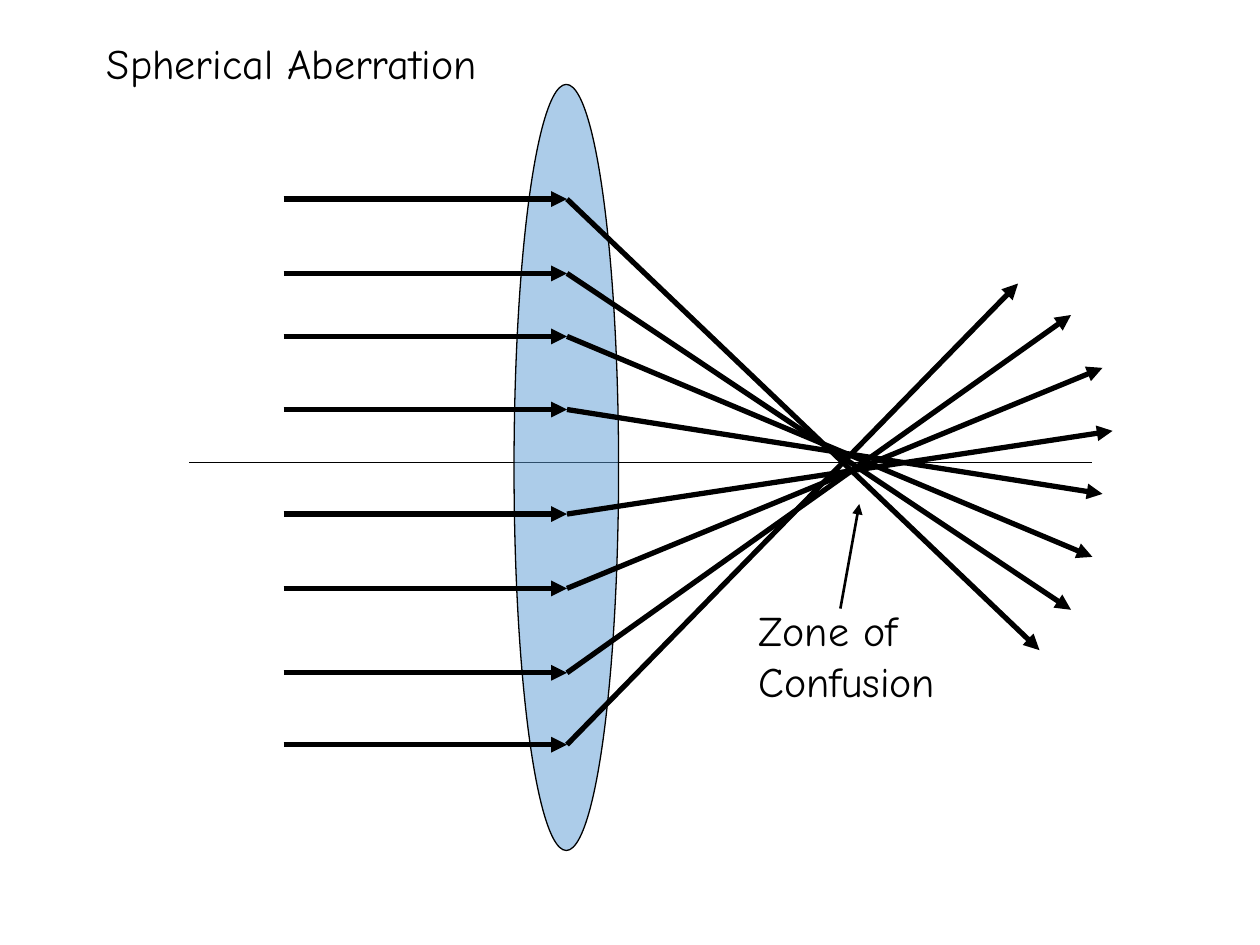
from dataclasses import dataclass
from typing import NamedTuple

from lxml.etree import SubElement
from pptx import Presentation
from pptx.dml.color import RGBColor as RGB
from pptx.enum.shapes import MSO_CONNECTOR as Conn, MSO_SHAPE as Shape
from pptx.enum.text import MSO_AUTO_SIZE as AutoSize
from pptx.oxml.ns import qn
from pptx.util import Inches, Pt


@dataclass(frozen=True)
class Theme:
    ink: RGB = RGB(0, 0, 0)
    lens: RGB = RGB(0x5B, 0x9B, 0xD5)
    lens_alpha: int = 50
    font: str = "Comic Neue"
    text_size: float = 24
    thin: float = 0.75
    pointer: float = 1.5
    ray: float = 3


class Point(NamedTuple):
    x: float
    y: float


class Ray(NamedTuple):
    height: float
    end: Point


THEME = Theme()
SOURCE_X = 2.25
LENS_X = 4.5
RAY_PAIRS = [
    (Ray(3.25, Point(8.75, 3.92)), Ray(4.08, Point(8.83, 3.42))),
    (Ray(2.67, Point(8.67, 4.42)), Ray(4.67, Point(8.75, 2.92))),
    (Ray(2.17, Point(8.5, 4.84)), Ray(5.34, Point(8.5, 2.5))),
    (Ray(1.58, Point(8.25, 5.16)), Ray(5.91, Point(8.08, 2.25))),
]


def add_text(shapes, text: str, left: float, top: float, width: float, height: float, *,
             size: float = THEME.text_size, color: RGB = THEME.ink, font: str = THEME.font):
    box = shapes.add_textbox(Inches(left), Inches(top), Inches(width), Inches(height))
    tf = box.text_frame
    tf.word_wrap = True
    tf.auto_size = AutoSize.SHAPE_TO_FIT_TEXT
    r = tf.paragraphs[0].add_run()
    r.text = text
    r.font.size = Pt(size)
    r.font.name = font
    r.font.color.rgb = color
    return box


def add_line(shapes, start: Point, end: Point, weight: float, arrow: bool = True):
    line = shapes.add_connector(Conn.STRAIGHT, *map(Inches, (*start, *end)))
    line.line.color.rgb = THEME.ink
    line.line.width = Pt(weight)
    sp_pr = line.element.spPr
    if arrow:
        SubElement(sp_pr.find(qn("a:ln")), qn("a:tailEnd"), type="triangle")
    SubElement(sp_pr, qn("a:effectLst"))
    return line


def add_lens(shapes, left: float, top: float, width: float, height: float):
    sp = shapes.add_shape(Shape.OVAL, *map(Inches, (left, top, width, height)))
    sp.shadow.inherit = False
    sp.fill.solid()
    sp.fill.fore_color.rgb = THEME.lens
    color = sp.element.spPr.find(qn("a:solidFill")).find(qn("a:srgbClr"))
    SubElement(color, qn("a:alpha"), val=str(THEME.lens_alpha * 1000))
    sp.line.color.rgb = THEME.ink
    sp.line.width = Pt(THEME.thin)
    return sp


def add_ray(shapes, ray: Ray) -> None:
    at_lens = Point(LENS_X, ray.height)
    add_line(shapes, Point(SOURCE_X, ray.height), at_lens, THEME.ray)
    add_line(shapes, at_lens, ray.end, THEME.ray)


def main() -> None:
    prs = Presentation()
    prs.slide_width, prs.slide_height = Inches(10), Inches(7.5)
    s = prs.slides.add_slide(prs.slide_layouts[6])

    add_text(s.shapes, "Spherical Aberration", 0.75, 0.25, 7.17, 1.67)
    add_line(s.shapes, Point(1.5, 3.67), Point(8.67, 3.67), THEME.thin, arrow=False)
    add_lens(s.shapes, 4.08, 0.67, 0.83, 6.08)

    for pair in RAY_PAIRS:
        group = s.shapes.add_group_shape()
        for ray in pair:
            add_ray(group.shapes, ray)

    label = s.shapes.add_group_shape()
    add_text(label.shapes, "Zone of Confusion", 5.92, 4.75, 1.75, 1.03)
    add_line(label.shapes, Point(6.67, 4.83), Point(6.82, 4), THEME.pointer)

    prs.save("out.pptx")


if __name__ == "__main__":
    main()
